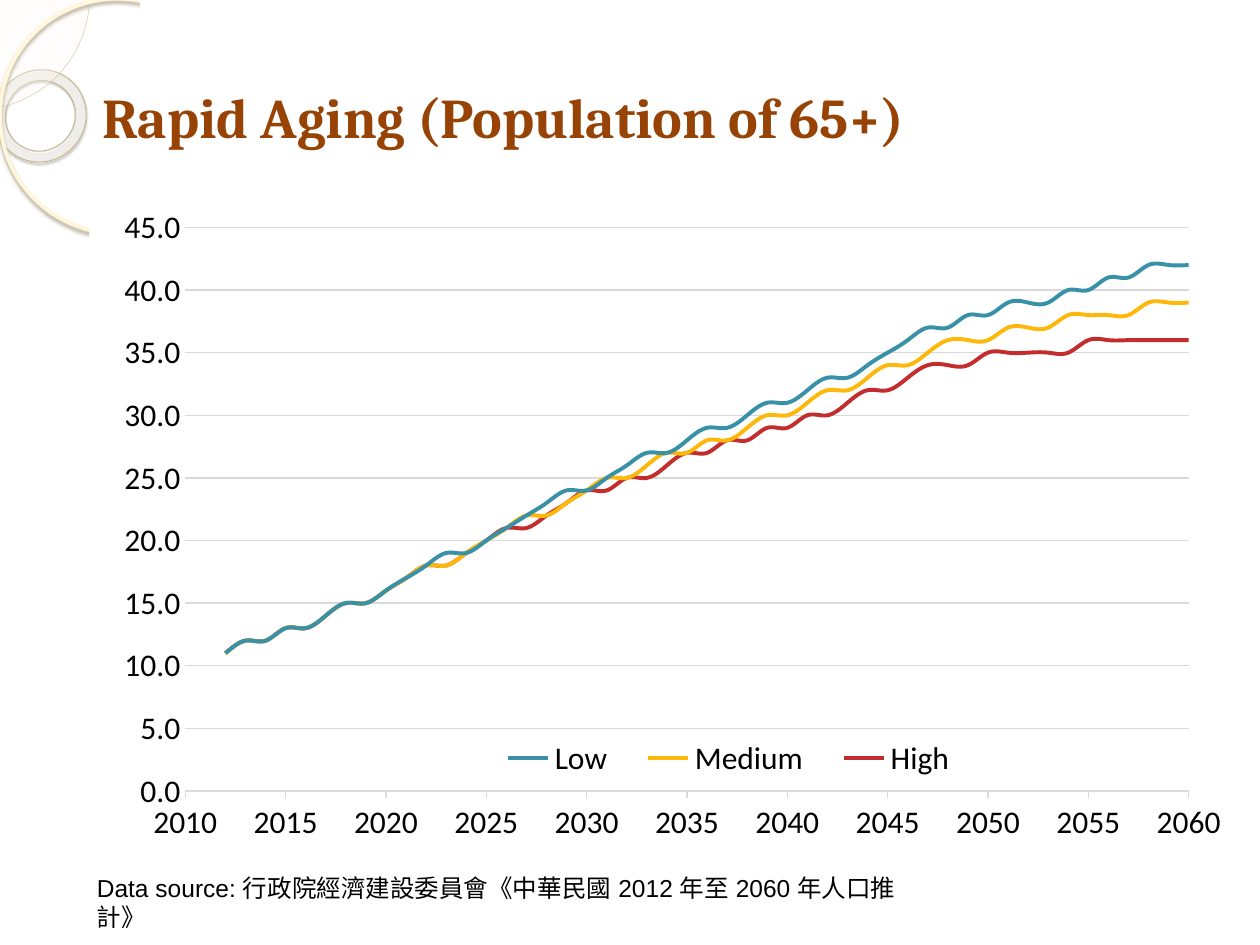
from lxml import etree
from pptx import Presentation
from pptx.chart.data import XyChartData
from pptx.dml.color import RGBColor
from pptx.enum.chart import XL_CHART_TYPE, XL_LEGEND_POSITION, XL_TICK_MARK
from pptx.enum.shapes import MSO_SHAPE
from pptx.enum.text import MSO_ANCHOR, PP_ALIGN
from pptx.oxml import parse_xml
from pptx.oxml.ns import nsdecls, qn
from pptx.util import Inches, Pt

SMOOTH = XL_CHART_TYPE.XY_SCATTER_SMOOTH_NO_MARKERS
BOTTOM = XL_LEGEND_POSITION.BOTTOM
NO_TICK, OUT_TICK = XL_TICK_MARK.NONE, XL_TICK_MARK.OUTSIDE
DONUT, PIE = MSO_SHAPE.DONUT, MSO_SHAPE.PIE
OVAL, RECT = MSO_SHAPE.OVAL, MSO_SHAPE.RECTANGLE
MIDDLE, LEFT = MSO_ANCHOR.MIDDLE, PP_ALIGN.LEFT

# Content
TITLE = "Rapid Aging (Population of 65+)"
SOURCE = "Data source: 行政院經濟建設委員會《中華民國 2012 年至 2060 年人口推計》"
START = 2012
SERIES = {
    "Low": [
        11, 12, 12, 13, 13, 14, 15, 15, 16, 17, 18, 19, 19, 20, 21, 22, 23,
        24, 24, 25, 26, 27, 27, 28, 29, 29, 30, 31, 31, 32, 33, 33, 34, 35,
        36, 37, 37, 38, 38, 39, 39, 39, 40, 40, 41, 41, 42, 42, 42],
    "Medium": [
        11, 12, 12, 13, 13, 14, 15, 15, 16, 17, 18, 18, 19, 20, 21, 22, 22,
        23, 24, 25, 25, 26, 27, 27, 28, 28, 29, 30, 30, 31, 32, 32, 33, 34,
        34, 35, 36, 36, 36, 37, 37, 37, 38, 38, 38, 38, 39, 39, 39],
    "High": [
        11, 12, 12, 13, 13, 14, 15, 15, 16, 17, 18, 18, 19, 20, 21, 21, 22,
        23, 24, 24, 25, 25, 26, 27, 27, 28, 28, 29, 29, 30, 30, 31, 32, 32,
        33, 34, 34, 34, 35, 35, 35, 35, 35, 36, 36, 36, 36, 36, 36],
}

THEME = {
    "title": ("Cambria", 32, "964305"),
    "chart": ("Calibri", 18, "000000"),
    "note": ("Arial", 14, "000000"),
    "lines": ["3891A7", "FEB80A", "C32D2E"],
    "grid": "D9D9D9", "paper": "FFFFFF",
    "ring": "C7B893", "leaf": "FEFAF4", "edge": "D3C39F", "arc": "FFF6DB",
    "glow": [(0, "FFFCF6", 70), (70, "FFFEFB", 55), (100, "F0D28E", 60)],
}


def rgb(code):
    return RGBColor.from_string(code)


def style(font, key, bold=False):
    name, size, color = THEME[key]
    font.name, font.size, font.bold = name, Pt(size), bold
    font.color.rgb = rgb(color)


def box(*sides):
    return [Inches(side) for side in sides]


def tint(color, alpha):
    return f'<a:srgbClr val="{color}"><a:alpha val="{alpha * 1000}"/></a:srgbClr>'


def shape(kind, place, fill=None, line=None, width=0):
    item = slide.shapes.add_shape(kind, *box(*place))
    item.shadow.inherit = False
    if fill:
        item.fill.solid()
        item.fill.fore_color.rgb = rgb(fill)
    else:
        item.fill.background()
    if line:
        item.line.color.rgb = rgb(line)
        item.line.width = Pt(width)
    else:
        item.line.fill.background()
    return item


def shade(item, color, alpha, blur, dist, angle):
    effect = item._element.spPr.find(qn("a:effectLst"))
    effect.append(parse_xml(
        f'<a:outerShdw {nsdecls("a")} blurRad="{Pt(blur)}" dist="{Pt(dist)}" '
        f'dir="{angle * 60000}" algn="tl" rotWithShape="0">'
        f'{tint(color, alpha)}</a:outerShdw>'))


def layout(x, y, w, h, inner=False):
    node = etree.Element(qn("c:layout"))
    manual = etree.SubElement(node, qn("c:manualLayout"))
    pairs = [("layoutTarget", "inner")] if inner else []
    pairs += [("xMode", "edge"), ("yMode", "edge"),
              ("x", x), ("y", y), ("w", w), ("h", h)]
    for tag, val in pairs:
        etree.SubElement(manual, qn("c:" + tag)).set("val", str(val))
    return node


deck = Presentation()
deck.slide_width, deck.slide_height = box(10, 7.5)
slide = deck.slides.add_slide(deck.slide_layouts[5])

# Corner ornaments, then the white page over them
ring = shape(DONUT, (-0.04, 0.55, 0.72, 0.74), THEME["paper"], THEME["ring"], 0.58)
ring.rotation = 38.6
ring.adjustments[0] = 0.12
stops = "".join(f'<a:gs pos="{pos * 1000}">{tint(color, alpha)}</a:gs>'
                for pos, color, alpha in THEME["glow"])
solid = ring._element.spPr.find(qn("a:solidFill"))
solid.getparent().replace(solid, parse_xml(
    f'<a:gradFill {nsdecls("a")}><a:gsLst>{stops}</a:gsLst><a:path path="circle">'
    '<a:fillToRect l="-408000" t="-50000" r="508000" b="150000"/>'
    '</a:path></a:gradFill>'))
shade(ring, "5A5444", 35, 1, 1.2, 75)

leaf = shape(PIE, (-1.08, -0.92, 1.79, 1.79), THEME["leaf"], THEME["edge"], 0.25)
leaf.adjustments[0], leaf.adjustments[1] = 0, 54
color = leaf._element.spPr.find(qn("a:solidFill"))[0]
etree.SubElement(color, qn("a:alpha")).set("val", "33000")

arc = shape(OVAL, (0, -0.01, 1.86, 1.86), None, THEME["arc"], 2.15)
shade(arc, "AFA58D", 85, 2, 2, 90)
shape(RECT, (1.11, 0, 8.89, 7.5), THEME["paper"])

# Title, brought in front of the page
title = slide.shapes.title
title.left, title.top, title.width, title.height = box(0.71, 0.3, 9.06, 1.25)
title.text_frame.text = TITLE
title.text_frame.vertical_anchor = MIDDLE
para = title.text_frame.paragraphs[0]
para.alignment = LEFT
style(para.runs[0].font, "title", True)
slide.shapes._spTree.append(title._element)

# Chart
data = XyChartData(number_format="0.0")
for name, vals in SERIES.items():
    row = data.add_series(name)
    for year, val in enumerate(vals, START):
        row.add_data_point(year, val)
chart = slide.shapes.add_chart(SMOOTH, *box(0.71, 1.58, 9.06, 5.25), data).chart
chart.has_title = False
style(chart.font, "chart")
for row, color in zip(chart.plots[0].series, THEME["lines"]):
    row.format.line.color.rgb = rgb(color)
    row.format.line.width = Pt(2.25)
    smooth = row._element.get_or_add_smooth()
    smooth.val = True

across, up = chart.category_axis, chart.value_axis
for axis, low, high, form, tick in ((across, 2010, 2060, "0", OUT_TICK),
                                    (up, 0, 45, "0.0", NO_TICK)):
    axis.minimum_scale, axis.maximum_scale, axis.major_unit = low, high, 5
    axis.major_tick_mark, axis.minor_tick_mark = tick, NO_TICK
    axis.tick_labels.number_format = form
    axis.tick_labels.number_format_is_linked = False
across.has_major_gridlines = False
up.has_major_gridlines = True
up.format.line.fill.background()
for line in (across.format.line, up.major_gridlines.format.line):
    line.color.rgb = rgb(THEME["grid"])
    line.width = Pt(0.75)

# Chart legend, plot place and backdrop
chart.has_legend = True
chart.legend.position = BOTTOM
chart.legend.include_in_layout = True
style(chart.legend.font, "chart")
legend = chart.legend._element
for old in legend.findall(qn("c:layout")):
    legend.remove(old)
legend.find(qn("c:legendPos")).addnext(layout(0.34, 0.81, 0.44, 0.07))
root = chart._chartSpace.find(qn("c:chart"))
plot = root.find(qn("c:plotArea"))
for old in plot.findall(qn("c:layout")):
    plot.remove(old)
plot.insert(0, layout(0.084, 0.043, 0.879, 0.852, True))
root.addnext(parse_xml(
    f'<c:spPr {nsdecls("c", "a")}><a:solidFill><a:srgbClr val="{THEME["paper"]}"/>'
    '</a:solidFill><a:ln><a:noFill/></a:ln></c:spPr>'))

# Source note, with its font set for Chinese text too
note = slide.shapes.add_textbox(*box(0.67, 6.88, 6.92, 0.34)).text_frame
note.word_wrap = True
note.text = SOURCE
font = note.paragraphs[0].runs[0].font
style(font, "note")
latin = font._element.find(qn("a:latin"))
latin.addnext(parse_xml(f'<a:ea {nsdecls("a")} typeface="{THEME["note"][0]}"/>'))

deck.save("out.pptx")
